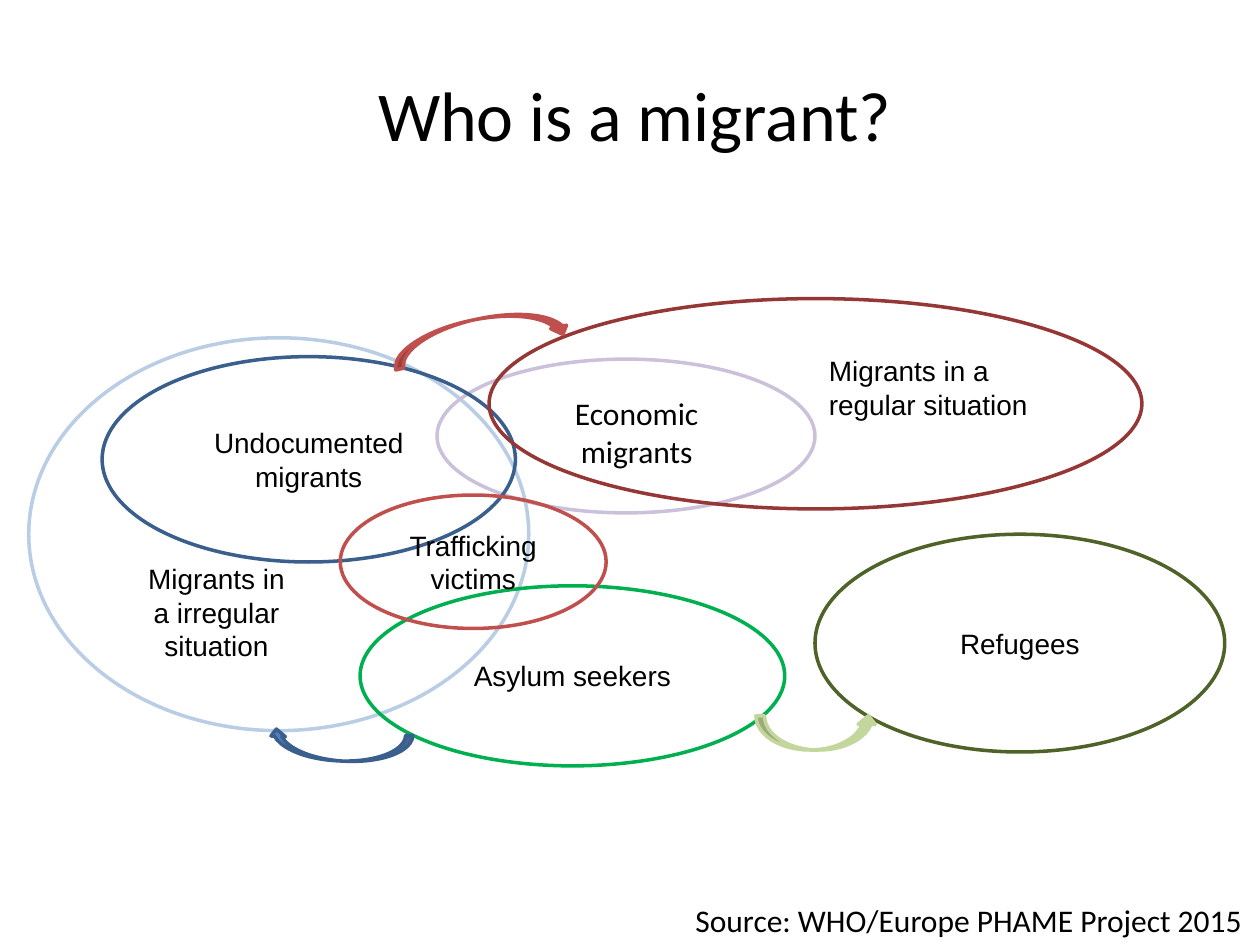
from pptx import Presentation
from pptx.dml.color import RGBColor
from pptx.enum.shapes import MSO_SHAPE
from pptx.enum.text import MSO_ANCHOR, PP_ALIGN
from pptx.util import Cm, Pt

ELLIPSE = MSO_SHAPE.OVAL
ARROW_DOWN = MSO_SHAPE.CURVED_DOWN_ARROW
ARROW_UP = MSO_SHAPE.CURVED_UP_ARROW
LEFT, CENTER = PP_ALIGN.LEFT, PP_ALIGN.CENTER
TOP, MIDDLE = MSO_ANCHOR.TOP, MSO_ANCHOR.MIDDLE

BLACK = RGBColor(0x00, 0x00, 0x00)
PALE_BLUE = RGBColor(0xB9, 0xCD, 0xE5)
BLUE = RGBColor(0x4F, 0x81, 0xBD)
DARK_BLUE = RGBColor(0x3A, 0x5F, 0x8C)
GREEN = RGBColor(0x00, 0xB0, 0x50)
PALE_GREEN = RGBColor(0xC3, 0xD6, 0x9B)
OLIVE = RGBColor(0x4F, 0x62, 0x28)
LILAC = RGBColor(0xCC, 0xC1, 0xDA)
RED = RGBColor(0xC0, 0x50, 0x4D)
DARK_RED = RGBColor(0x95, 0x37, 0x35)

# Groups of migrants: left, top, width, height (cm), outline, label
GROUPS = [
    (0.58, 6.81, 10.08, 7.92, PALE_BLUE, ""),
    (7.26, 11.81, 8.56, 3.63, GREEN, "Asylum seekers"),
    (16.43, 10.77, 8.26, 4.39, OLIVE, "Refugees"),
    (8.81, 7.24, 7.62, 3.1, LILAC, ""),
    (2.06, 7.19, 8.33, 4.14, DARK_BLUE, "Undocumented migrants"),
    (9.86, 6.02, 13.16, 4.24, DARK_RED, ""),
    (6.86, 9.98, 5.36, 2.69, RED, "Trafficking victims"),
]

# Moves between groups: preset, left, top, width, height (cm), rotation, fill, outline
MOVES = [
    (ARROW_DOWN, 5.41, 14.76, 2.9, 0.58, 182.8, BLUE, DARK_BLUE),
    (ARROW_UP, 15.24, 14.43, 2.44, 0.69, 0, PALE_GREEN, PALE_GREEN),
    (ARROW_DOWN, 7.87, 6.43, 3.61, 0.66, 348, RED, RED),
]


def write(frame, lines, font_name, size, align, anchor):
    frame.vertical_anchor = anchor
    frame.text = "\n".join(lines)
    for paragraph in frame.paragraphs:
        paragraph.alignment = align
        paragraph.font.name = font_name
        paragraph.font.size = Pt(size)
        paragraph.font.color.rgb = BLACK


def add_outlined(slide, preset, left, top, width, height, outline):
    shape = slide.shapes.add_shape(preset, Cm(left), Cm(top), Cm(width), Cm(height))
    shape.shadow.inherit = False
    shape.line.color.rgb = outline
    shape.line.width = Pt(2)
    return shape


def add_group(slide, left, top, width, height, outline, label):
    group = add_outlined(slide, ELLIPSE, left, top, width, height, outline)
    group.fill.background()
    if label:
        write(group.text_frame, [label], "Arial", 16, CENTER, MIDDLE)


def add_move(slide, preset, left, top, width, height, rotation, fill, outline):
    move = add_outlined(slide, preset, left, top, width, height, outline)
    move.rotation = rotation
    move.fill.solid()
    move.fill.fore_color.rgb = fill


def add_text(slide, left, top, width, height, lines, font_name, size,
             align=CENTER, anchor=TOP, wrap=True):
    box = slide.shapes.add_textbox(Cm(left), Cm(top), Cm(width), Cm(height))
    box.text_frame.word_wrap = wrap
    write(box.text_frame, lines, font_name, size, align, anchor)


def main():
    prs = Presentation()
    prs.slide_width, prs.slide_height = Cm(25.4), Cm(19.05)
    slide = prs.slides.add_slide(prs.slide_layouts[6])

    # Overlapping groups and the moves between them
    for group in GROUPS:
        add_group(slide, *group)
    for move in MOVES:
        add_move(slide, *move)

    # Labels set off-centre in their groups
    add_text(slide, 0.86, 11.2, 7.01, 2.31,
             ["Migrants in", "a irregular", "situation"], "Arial", 16)
    add_text(slide, 11.02, 7.82, 3.63, 1.8, ["Economic", "migrants"], "Calibri", 18)
    add_text(slide, 16.46, 7.01, 6.4, 1.63,
             ["Migrants in a", "regular situation"], "Arial", 16, LEFT)

    # Title and source
    add_text(slide, 0.64, 1.7, 24.31, 1.19, ["Who is a migrant?"], "Calibri", 40,
             anchor=MIDDLE)
    add_text(slide, 13.77, 18.03, 11.66, 1.02,
             ["Source: WHO/Europe PHAME Project 2015"], "Calibri", 18, LEFT, wrap=False)

    prs.save("out.pptx")


if __name__ == "__main__":
    main()
